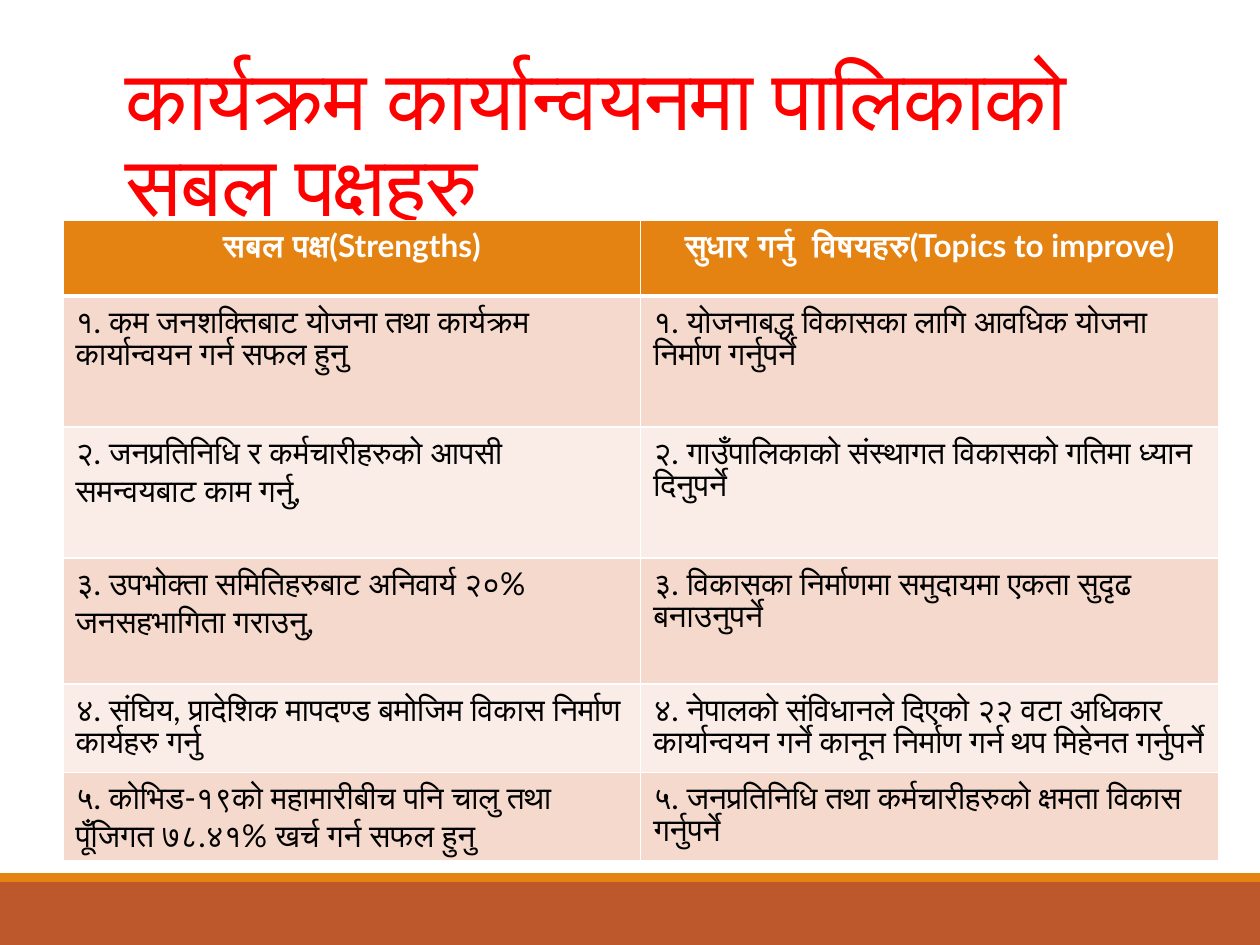
from dataclasses import dataclass

from lxml.etree import SubElement
from pptx import Presentation
from pptx.dml.color import RGBColor
from pptx.enum.shapes import MSO_CONNECTOR, MSO_SHAPE
from pptx.enum.text import MSO_ANCHOR, PP_ALIGN
from pptx.oxml import parse_xml
from pptx.oxml.ns import nsdecls, qn
from pptx.util import Inches, Pt


@dataclass(frozen=True)
class Theme:
    font: str = "Lato"
    title_size: int = 48
    body_size: int = 18
    title: str = "FF0000"
    text: str = "000000"
    white: str = "FFFFFF"
    accent: str = "E48312"
    footer: str = "BD582C"
    rule: str = "808080"
    bands: tuple = ("F5D9CC", "FAEDE7")


THEME = Theme()
TITLE = "कार्यक्रम कार्यान्वयनमा पालिकाको सबल पक्षहरु"
ROWS = [
    ("सबल पक्ष(Strengths)", "सुधार गर्नु  विषयहरु(Topics to improve)"),
    ("१. कम जनशक्तिबाट योजना तथा कार्यक्रम कार्यान्वयन गर्न सफल हुनु",
     "१. योजनाबद्ध विकासका लागि आवधिक योजना निर्माण गर्नुपर्ने"),
    ("२. जनप्रतिनिधि र कर्मचारीहरुको आपसी समन्वयबाट काम गर्नु,",
     "२. गाउँपालिकाको संस्थागत विकासको गतिमा ध्यान दिनुपर्ने"),
    ("३. उपभोक्ता समितिहरुबाट अनिवार्य २०% जनसहभागिता गराउनु,",
     "३. विकासका निर्माणमा समुदायमा एकता सुदृढ बनाउनुपर्ने"),
    ("४. संघिय, प्रादेशिक मापदण्ड बमोजिम विकास निर्माण कार्यहरु गर्नु",
     "४. नेपालको संविधानले दिएको २२ वटा अधिकार कार्यान्वयन गर्ने कानून "
     "निर्माण गर्न थप मिहेनत गर्नुपर्ने"),
    ("५. कोभिड-१९को महामारीबीच पनि चालु तथा पूँजिगत ७८.४१% खर्च गर्न सफल हुनु",
     "५. जनप्रतिनिधि तथा कर्मचारीहरुको क्षमता विकास गर्नुपर्ने"),
]
ROW_HEIGHTS = (0.6, 1.04, 1.04, 1.0, 0.65, 0.7)


def rgb(value):
    return RGBColor.from_string(value)


def write(tf, text, size, color, bold=False, **paragraph):
    p = tf.paragraphs[0]
    for name, value in paragraph.items():
        setattr(p, name, value)
    r = p.add_run()
    r.text = text
    for name, value in dict(name=THEME.font, size=Pt(size), bold=bold).items():
        setattr(r.font, name, value)
    r.font.color.rgb = rgb(color)
    return r


def add_footer(s, left, top, width, height):
    """Thin accent strip above a solid band."""
    strip = 0.07
    for y, h, color in ((top + strip, height - strip, THEME.footer),
                        (top, strip, THEME.accent)):
        sp = s.shapes.add_shape(MSO_SHAPE.RECTANGLE, Inches(left), Inches(y),
                                Inches(width), Inches(h))
        sp.shadow.inherit = False
        sp.fill.solid()
        sp.fill.fore_color.rgb = rgb(color)
        sp.line.fill.background()


def add_title(s, left, top, width, height):
    """Bottom-anchored title with a rule along its lower edge."""
    bottom = Inches(top + height)
    rule = s.shapes.add_connector(MSO_CONNECTOR.STRAIGHT, Inches(left + 0.08), bottom,
                                  Inches(left + width), bottom)
    rule.line.color.rgb = rgb(THEME.rule)
    rule.line.width = Pt(0.5)
    SubElement(rule._element.spPr, qn("a:effectLst"))
    box = s.shapes.add_textbox(Inches(left), Inches(top), Inches(width), Inches(height))
    tf = box.text_frame
    tf.word_wrap = True
    tf.vertical_anchor = MSO_ANCHOR.BOTTOM
    r = write(tf, TITLE, THEME.title_size, THEME.title, line_spacing=0.85)
    r.font._element.set("spc", "-50")


def set_borders(cell, **widths):
    """Draw white borders; widths in points are keyed L, R, T, B in that order."""
    tcPr = cell._tc.get_or_add_tcPr()
    for i, (side, width) in enumerate(widths.items()):
        tcPr.insert(i, parse_xml(
            f'<a:ln{side} {nsdecls("a")} w="{Pt(width)}"><a:solidFill>'
            f'<a:srgbClr val="{THEME.white}"/></a:solidFill></a:ln{side}>'))


def add_comparison(s, left, top, width):
    table = s.shapes.add_table(len(ROWS), 2, Inches(left), Inches(top), Inches(width),
                               Inches(sum(ROW_HEIGHTS))).table
    for column in table.columns:
        column.width = Inches(width / 2)
    for i, (texts, height) in enumerate(zip(ROWS, ROW_HEIGHTS)):
        table.rows[i].height = Inches(height)
        header = i == 0
        fill = THEME.accent if header else THEME.bands[(i - 1) % 2]
        color = THEME.white if header else THEME.text
        align = PP_ALIGN.CENTER if header else PP_ALIGN.LEFT
        for cell, text in zip(table.rows[i].cells, texts):
            cell.fill.solid()
            cell.fill.fore_color.rgb = rgb(fill)
            set_borders(cell, L=1, R=1, T=3 if i == 1 else 1, B=3 if header else 1)
            write(cell.text_frame, text, THEME.body_size, color, header, alignment=align)


def main():
    prs = Presentation()
    prs.slide_width, prs.slide_height = Inches(10), Inches(7.5)
    s = prs.slides.add_slide(prs.slide_layouts[6])
    add_footer(s, 0, 6.93, 10, 0.57)
    add_title(s, 0.9, 0.31, 8.25, 1.59)
    add_comparison(s, 0.5, 1.75, 9.17)
    prs.save("out.pptx")


if __name__ == "__main__":
    main()
